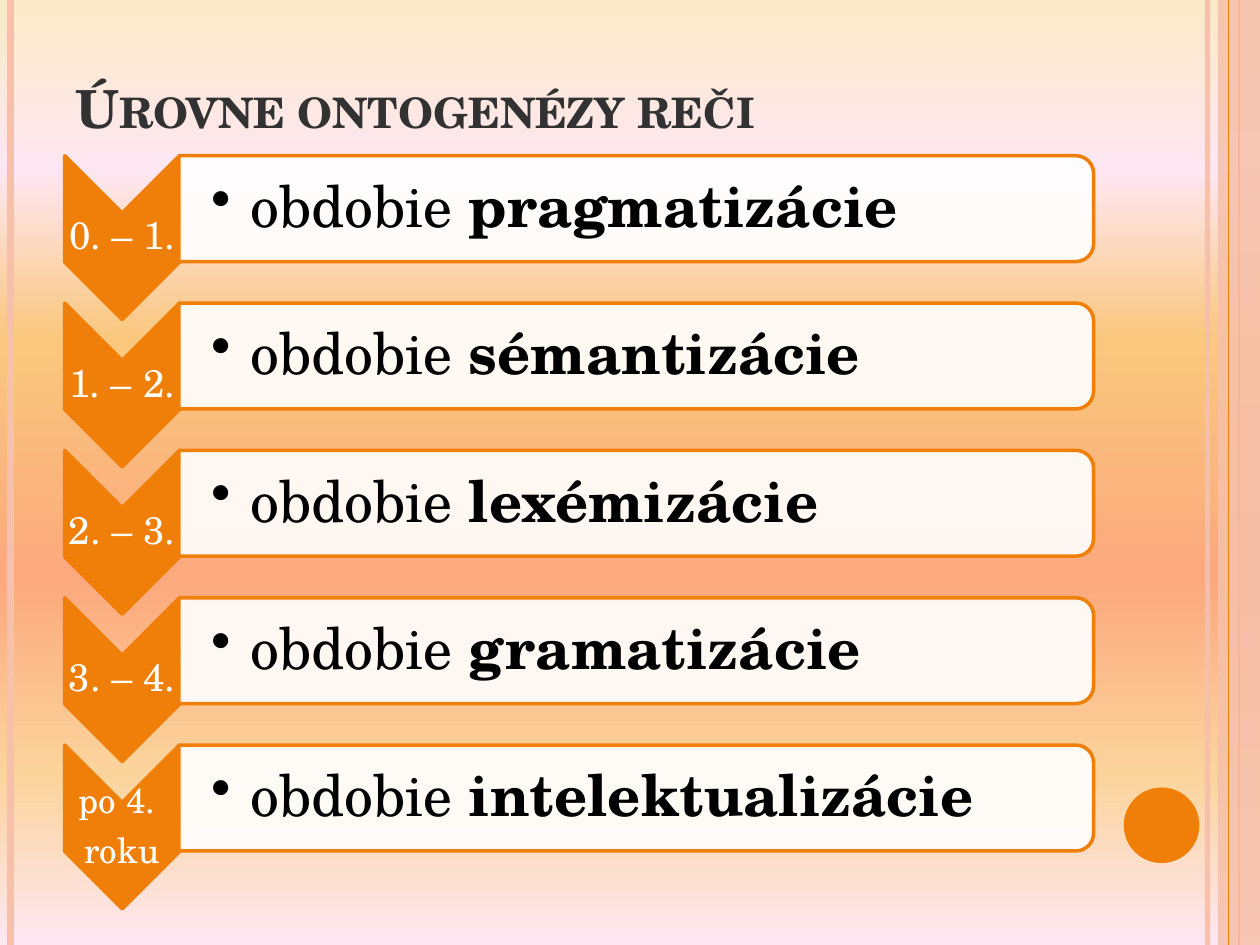
from lxml import etree
from pptx import Presentation
from pptx.dml.color import RGBColor
from pptx.enum import shapes, text
from pptx.oxml import ns
from pptx.util import Pt

ORANGE = RGBColor(0xF0, 0x7F, 0x09)
PEACH = RGBColor(0xF6, 0xC0, 0xAB)
CHARCOAL = RGBColor(0x32, 0x32, 0x32)
BLACK = RGBColor(0, 0, 0)
WHITE = RGBColor(0xFF, 0xFF, 0xFF)
FONT = "TeX Gyre Schola"

WIDTH, HEIGHT = 720, 540
TITLE = "Úrovne ontogenézy reči"
PREFIX = "obdobie "
STAGES = [
    (["0. – 1. "], "pragmatizácie"),
    (["1. – 2. "], "sémantizácie"),
    (["2. – 3. "], "lexémizácie"),
    (["3. – 4. "], "gramatizácie"),
    (["po 4. ", "roku"], "intelektualizácie"),
]
BACKDROP = [(0, "FBEAC7"), (18, "FEE7F2"), (36, "FAC77D"),
            (61, "FBA97D"), (82, "FBD49C"), (100, "FEE7F2")]
STRIPES_BEHIND = [(690, PEACH, 3, 93), (6, PEACH, 4.5, 100), (708, ORANGE, 1.5, 100)]
STRIPE_ON_BAND = (702, ORANGE, 0.75, 100)

STAGE_TOP, STAGE_STEP = 89, 84.2
ARROW = dict(left=37, width=65.6, height=93.6)
BAR = dict(left=102.2, width=522.7, height=60.5)


def child(parent, tag, **attributes):
    return etree.SubElement(parent, ns.qn(tag), attributes)


def set_alpha(element, percent):
    if percent < 100:
        color = next(element.iter(ns.qn("a:srgbClr")))
        child(color, "a:alpha", val=str(percent * 1000))


def add_backdrop(slide):
    fill = slide.background.fill
    fill.gradient()
    fill.gradient_angle = 270
    stops = next(slide.element.iter(ns.qn("a:gsLst")))
    for old in list(stops):
        stops.remove(old)
    for position, color in BACKDROP:
        stop = child(stops, "a:gs", pos=str(position * 1000))
        child(stop, "a:srgbClr", val=color)


def add_stripe(slide, x, color, weight, opacity):
    stripe = slide.shapes.add_connector(
        shapes.MSO_CONNECTOR.STRAIGHT, Pt(x), 0, Pt(x), Pt(HEIGHT))
    stripe.line.color.rgb = color
    stripe.line.width = Pt(weight)
    properties = stripe._element.spPr
    set_alpha(properties, opacity)
    child(properties, "a:effectLst")


def add_figure(slide, preset, left, top, width, height, color, opacity=100, outline=None):
    figure = slide.shapes.add_shape(preset, Pt(left), Pt(top), Pt(width), Pt(height))
    figure.shadow.inherit = False
    figure.fill.solid()
    figure.fill.fore_color.rgb = color
    set_alpha(figure._element.spPr, opacity)
    if outline is None:
        figure.line.fill.background()
    else:
        figure.line.color.rgb = outline
        figure.line.width = Pt(2)
    return figure


def add_turned(slide, preset, left, top, width, height, color, opacity=100):
    shift = (width - height) / 2
    figure = add_figure(slide, preset, left + shift, top - shift, height, width,
                        color, opacity, ORANGE)
    figure.rotation = 90


def add_words(slide, left, top, width, height, paragraphs, size, color,
              frame_format, paragraph_format):
    frame = slide.shapes.add_textbox(Pt(left), Pt(top), Pt(width), Pt(height)).text_frame
    for name, value in dict(word_wrap=True, **frame_format).items():
        setattr(frame, name, value)
    for index, runs in enumerate(paragraphs):
        paragraph = frame.add_paragraph() if index else frame.paragraphs[0]
        for name, value in paragraph_format.items():
            setattr(paragraph, name, value)
        for words, bold in runs:
            run = paragraph.add_run()
            run.text = words
            for name, value in dict(name=FONT, size=Pt(size), bold=bold).items():
                setattr(run.font, name, value)
            run.font.color.rgb = color
    return frame


def insets(margin, left=None):
    return dict(vertical_anchor=text.MSO_ANCHOR.MIDDLE,
                margin_left=Pt(margin if left is None else left),
                margin_right=Pt(margin), margin_top=Pt(margin), margin_bottom=Pt(margin))


def add_stage(slide, top, age, period):
    add_turned(slide, shapes.MSO_SHAPE.CHEVRON, top=top, color=ORANGE, **ARROW)
    split = len(age) > 1
    add_words(slide, ARROW["left"], top + 32.7, ARROW["width"], 28,
              [[(line, False)] for line in age], 20 if split else 22, WHITE,
              insets(0.9 if split else 1.1),
              dict(alignment=text.PP_ALIGN.CENTER, line_spacing=0.9, space_after=Pt(7)))
    add_turned(slide, shapes.MSO_SHAPE.ROUND_2_SAME_RECTANGLE, top=top,
               color=WHITE, opacity=90, **BAR)
    frame = add_words(slide, BAR["left"], top + 3, 519.8, 54.7,
                      [[(PREFIX, False), (period, True)]], 33, BLACK,
                      insets(1.6, 18.5), dict(line_spacing=0.9))
    properties = frame.paragraphs[0]._p.get_or_add_pPr()
    properties.set("marL", str(Pt(22.5)))
    properties.set("indent", str(Pt(-22.5)))
    child(properties, "a:buChar", char="•")


def main():
    deck = Presentation()
    deck.slide_width, deck.slide_height = Pt(WIDTH), Pt(HEIGHT)
    slide = deck.slides.add_slide(deck.slide_layouts[6])
    add_backdrop(slide)
    for stripe in STRIPES_BEHIND:
        add_stripe(slide, *stripe)
    add_figure(slide, shapes.MSO_SHAPE.RECTANGLE, 696, 0, 24, HEIGHT, PEACH, 87)
    add_stripe(slide, *STRIPE_ON_BAND)
    add_figure(slide, shapes.MSO_SHAPE.OVAL, 642.2, 450, 43.2, 43.2, ORANGE)
    heading = add_words(slide, 36, 21.6, 588, 61.2, [[(TITLE, True)]], 30, CHARCOAL,
                        dict(vertical_anchor=text.MSO_ANCHOR.BOTTOM), {})
    heading.paragraphs[0].runs[0]._r.get_or_add_rPr().set("cap", "small")
    for index, (age, period) in enumerate(STAGES):
        add_stage(slide, STAGE_TOP + index * STAGE_STEP, age, period)
    deck.save("out.pptx")


if __name__ == "__main__":
    main()
